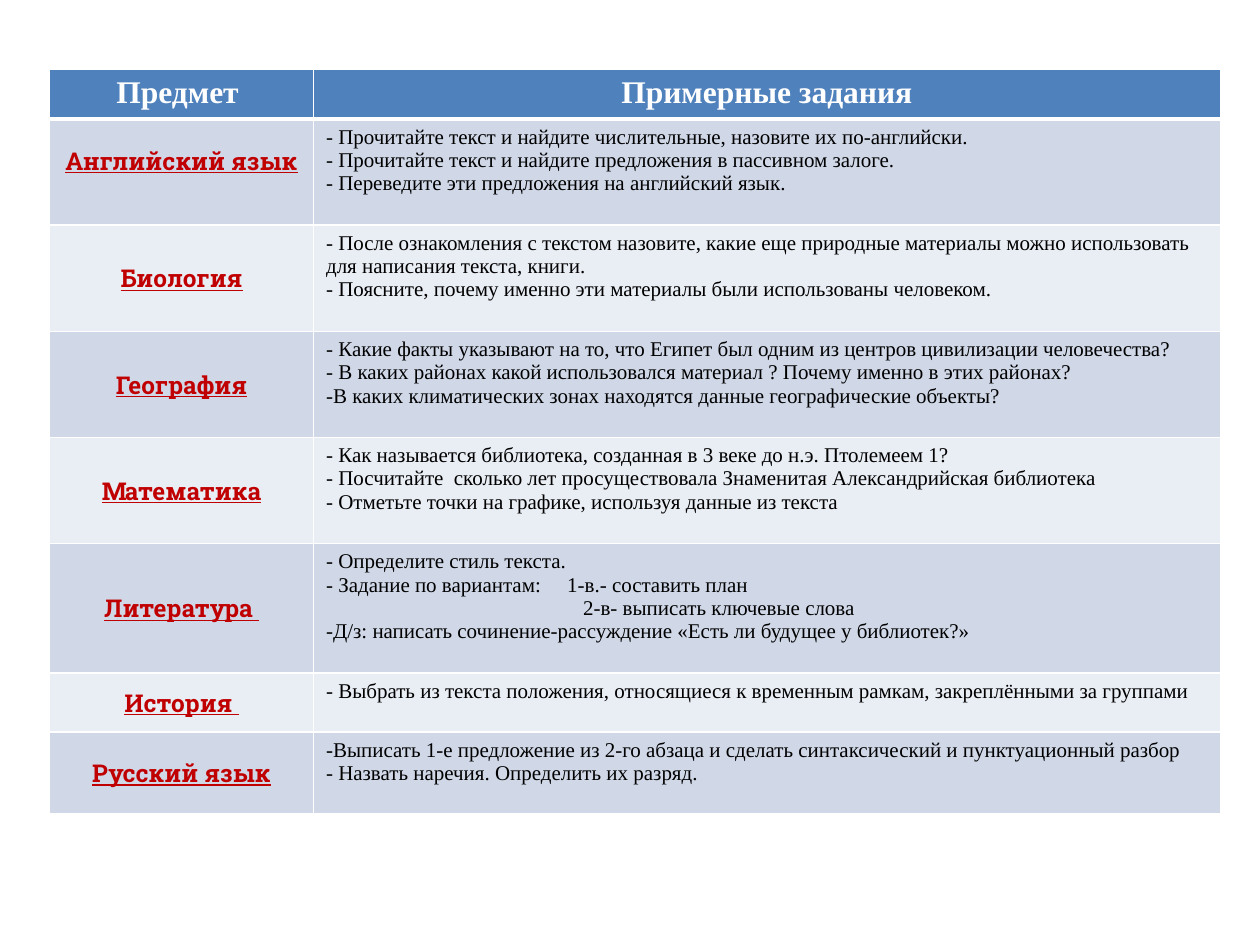
"""Build a slide with a table of school subjects and sample tasks."""
from lxml.etree import SubElement
from pptx import Presentation
from pptx.dml.color import RGBColor
from pptx.enum.text import MSO_ANCHOR as ANCHOR, PP_ALIGN as ALIGN
from pptx.oxml.ns import qn
from pptx.util import Cm, Pt

WHITE = RGBColor(0xFF, 0xFF, 0xFF)
BLACK = RGBColor(0, 0, 0)
BLUE = RGBColor(0x4F, 0x81, 0xBD)
RED = RGBColor(0xC0, 0, 0)
BANDS = [RGBColor(0xE9, 0xED, 0xF4), RGBColor(0xD0, 0xD8, 0xE8)]
SERIF, SLAB = "Times New Roman", "Roboto Slab"
BULLET = "•"
VARIANT_1, VARIANT_2 = Cm(4.86), Cm(5.18)

ROWS = [
    (1, "Предмет ", ["Примерные задания"]),
    (2.14, "Английский язык", [
        "- Прочитайте текст и найдите числительные, назовите их по-английски.",
        "- Прочитайте текст и найдите предложения в пассивном залоге.",
        "- Переведите эти предложения на английский язык."]),
    (2.14, "Биология", [
        "- После ознакомления с текстом назовите, какие еще природные материалы "
        "можно использовать для написания текста, книги.",
        "- Поясните, почему именно эти материалы были использованы человеком."]),
    (2.14, "География", [
        "- Какие факты указывают на то, что Египет был одним из центров цивилизации человечества?",
        "- В каких районах какой использовался материал ? Почему именно в этих районах?",
        "•В каких климатических зонах находятся данные географические объекты?"]),
    (2.14, "Математика", [
        "- Как называется библиотека, созданная в 3 веке до н.э. Птолемеем 1?",
        "- Посчитайте  сколько лет просуществовала Знаменитая Александрийская библиотека",
        "• Отметьте точки на графике, используя данные из текста"]),
    (2.61, "Литература ", [
        "- Определите стиль текста.",
        "- Задание по вариантам:\t1-в.- составить план",
        "2-в- выписать ключевые слова",
        "•Д/з: написать сочинение-рассуждение «Есть ли будущее у библиотек?»"]),
    (1.19, "История ", [
        "- Выбрать из текста положения, относящиеся к временным рамкам, закреплёнными за группами"]),
    (1.65, "Русский язык", [
        "•Выписать 1-е предложение из 2-го абзаца и сделать синтаксический и пунктуационный разбор",
        "• Назвать наречия. Определить их разряд."]),
]


def style_cell(cell, fill, bottom_width):
    tcPr = cell._tc.get_or_add_tcPr()
    for side in "LRTB":
        width = Pt(bottom_width if side == "B" else 1)
        ln = SubElement(tcPr, qn(f"a:ln{side}"), w=str(width))
        solid = SubElement(ln, qn("a:solidFill"))
        SubElement(solid, qn("a:srgbClr"), val=str(WHITE))
    cell.fill.solid()
    cell.fill.fore_color.rgb = fill


def write(p, text, font, size, color, bold, underline=False):
    p.text = text
    for r in p.runs:
        r.font.name, r.font.size = font, Pt(size)
        r.font.bold, r.font.underline = bold, underline
        r.font.color.rgb = color


prs = Presentation()
prs.slide_width, prs.slide_height = Cm(25.4), Cm(19.05)
s = prs.slides.add_slide(prs.slide_layouts[6])

height = Cm(sum(row[0] for row in ROWS))
table = s.shapes.add_table(len(ROWS), 2, Cm(1), Cm(1.4), Cm(23.6), height).table
table.columns[0].width, table.columns[1].width = Cm(5.32), Cm(18.28)

for i, (row_height, subject, tasks) in enumerate(ROWS):
    table.rows[i].height = Cm(row_height)
    name, body = table.cell(i, 0), table.cell(i, 1)
    header = i == 0
    for cell in (name, body):
        style_cell(cell, BLUE if header else BANDS[i % 2], 3 if header else 1)

    p = name.text_frame.paragraphs[0]
    p.alignment = ALIGN.CENTER
    if header:
        write(p, subject, SERIF, 18, WHITE, True)
        p = body.text_frame.paragraphs[0]
        p.alignment = ALIGN.CENTER
        write(p, tasks[0], SERIF, 18, WHITE, True)
        continue
    name.vertical_anchor = ANCHOR.MIDDLE
    write(p, subject, SLAB, 14, RED, True, True)

    tf = body.text_frame
    for j, task in enumerate(tasks):
        p = tf.add_paragraph() if j else tf.paragraphs[0]
        pPr = p._p.get_or_add_pPr()
        if task.startswith(BULLET):
            pPr.set("marL", "0")
            pPr.set("indent", "0")
            SubElement(pPr, qn("a:buFont"), typeface=SERIF)
            SubElement(pPr, qn("a:buChar"), char="-")
        elif "\t" in task:
            tabs = SubElement(pPr, qn("a:tabLst"))
            SubElement(tabs, qn("a:tab"), pos=str(VARIANT_1), algn="l")
        elif task.startswith("2-в"):
            pPr.set("marL", str(VARIANT_2))
        write(p, task.lstrip(BULLET), SERIF, 12, BLACK, False)

table.cell(1, 0).margin_bottom = Cm(0.6)

prs.save("out.pptx")
